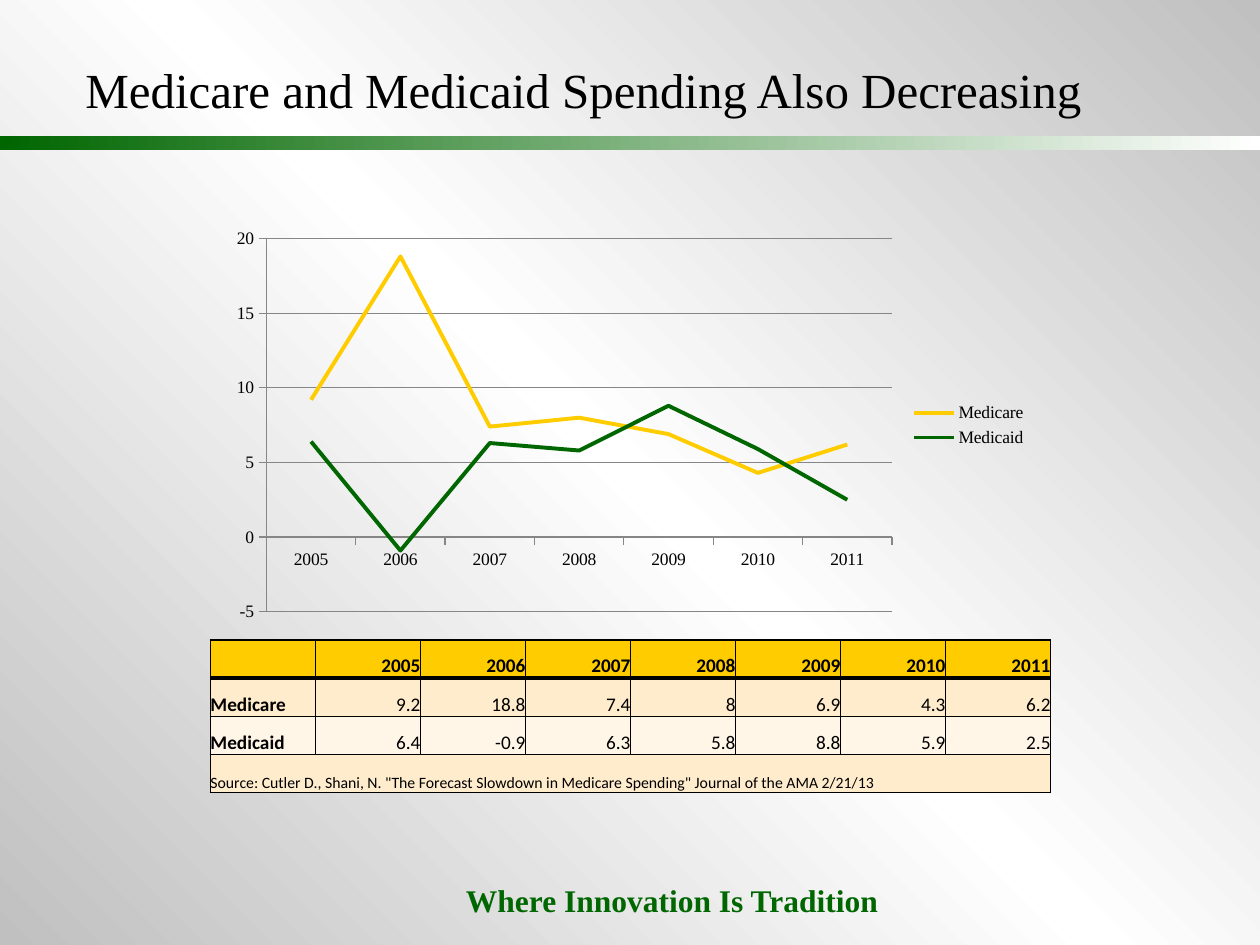
from copy import deepcopy

from lxml import etree
from pptx import Presentation
from pptx.chart.data import CategoryChartData
from pptx.dml.color import RGBColor
from pptx.enum.chart import XL_CHART_TYPE, XL_LEGEND_POSITION, XL_MARKER_STYLE, XL_TICK_MARK
from pptx.enum.shapes import MSO_SHAPE
from pptx.enum.text import MSO_ANCHOR, MSO_AUTO_SIZE, PP_ALIGN
from pptx.oxml.ns import qn
from pptx.util import Inches, Pt

LINE_CHART = XL_CHART_TYPE.LINE
LEGEND_RIGHT = XL_LEGEND_POSITION.RIGHT
NO_MARKER = XL_MARKER_STYLE.NONE
TICK_OUTSIDE = XL_TICK_MARK.OUTSIDE
RECTANGLE = MSO_SHAPE.RECTANGLE
BOTTOM = MSO_ANCHOR.BOTTOM
FIT_SHAPE = MSO_AUTO_SIZE.SHAPE_TO_FIT_TEXT
LEFT, RIGHT = PP_ALIGN.LEFT, PP_ALIGN.RIGHT

BLACK, GREEN, GOLD, GRAY, WHITE = "000000", "006600", "FFCC00", "868686", "FFFFFF"
SILVER, CREAM, PALE_CREAM = "C0C0C0", "FFECCC", "FFF6E7"

YEARS = ["2005", "2006", "2007", "2008", "2009", "2010", "2011"]
SPENDING = {
    "Medicare": [9.2, 18.8, 7.4, 8, 6.9, 4.3, 6.2],
    "Medicaid": [6.4, -0.9, 6.3, 5.8, 8.8, 5.9, 2.5],
}
SOURCE = ('Source: Cutler D., Shani, N. "The Forecast Slowdown in Medicare Spending" '
          "Journal of the AMA 2/21/13")


def color(value):
    return RGBColor.from_string(value)


class SlideBuilder:
    serif, sans = "Times New Roman", "Calibri"

    def __init__(self, slide):
        self.slide = slide

    def style(self, font, name, size, bold=False, fill=BLACK):
        font.name, font.size, font.bold = name, Pt(size), bold
        font.color.rgb = color(fill)

    def gradient(self, owner, element, colors, angle):
        """Spread the colours evenly along the gradient."""
        owner.fill.gradient()
        owner.fill.gradient_angle = angle
        stop_list = next(element.iter(qn("a:gsLst")))
        while len(stop_list) < len(colors):
            stop_list.append(deepcopy(stop_list[0]))
        for index, (stop, value) in enumerate(zip(owner.fill.gradient_stops, colors)):
            stop.position = index / (len(colors) - 1)
            stop.color.rgb = color(value)

    def background(self, colors, angle):
        self.gradient(self.slide.background, self.slide.element, colors, angle)

    def band(self, left, top, width, height, colors):
        shape = self.slide.shapes.add_shape(
            RECTANGLE, Inches(left), Inches(top), Inches(width), Inches(height))
        shape.shadow.inherit = False
        shape.line.fill.background()
        self.gradient(shape, shape.element, colors, 0)

    def text(self, left, top, width, height, words, size, bold=False, fill=BLACK):
        shape = self.slide.shapes.add_textbox(
            Inches(left), Inches(top), Inches(width), Inches(height))
        frame = shape.text_frame
        frame.word_wrap = False
        frame.auto_size = FIT_SHAPE
        frame.text = words
        self.style(frame.paragraphs[0].font, self.serif, size, bold, fill)

    def line_chart(self, left, top, width, height, categories, series, colors):
        data = CategoryChartData()
        data.categories = categories
        for name, values in series.items():
            data.add_series(name, values)
        chart = self.slide.shapes.add_chart(
            LINE_CHART, Inches(left), Inches(top), Inches(width), Inches(height), data).chart
        self.style(chart.font, self.serif, 10)
        chart.has_title = False
        chart.has_legend = True
        chart.legend.position = LEGEND_RIGHT
        chart.legend.include_in_layout = False
        value_axis = chart.value_axis
        value_axis.minimum_scale, value_axis.maximum_scale = -5, 20
        value_axis.major_unit = 5
        value_axis.has_major_gridlines = True
        for axis in (chart.category_axis, value_axis):
            axis.major_tick_mark = TICK_OUTSIDE
        for part in (chart.category_axis, value_axis, value_axis.major_gridlines):
            part.format.line.color.rgb = color(GRAY)
            part.format.line.width = Pt(0.75)
        for plotted, value in zip(chart.plots[0].series, colors):
            plotted.smooth = False
            plotted.marker.style = NO_MARKER
            plotted.format.line.color.rgb = color(value)
            plotted.format.line.width = Pt(2.25)

    def borders(self, cell, top, bottom):
        properties = cell._tc.get_or_add_tcPr()
        widths = {"lnL": 1, "lnR": 1, "lnT": top, "lnB": bottom}
        for index, (side, width) in enumerate(widths.items()):
            line = etree.Element(qn(f"a:{side}"), w=str(Pt(width)))
            fill = etree.SubElement(line, qn("a:solidFill"))
            etree.SubElement(fill, qn("a:srgbClr"), val=BLACK)
            properties.insert(index, line)

    def cell(self, cell, words, fill, size, bold, align):
        cell.fill.solid()
        cell.fill.fore_color.rgb = color(fill)
        cell.margin_left = cell.margin_right = cell.margin_top = cell.margin_bottom = 0
        cell.vertical_anchor = BOTTOM
        cell.text = words
        paragraph = cell.text_frame.paragraphs[0]
        paragraph.alignment = align
        self.style(paragraph.font, self.sans, size, bold)

    def table(self, left, top, width, height, rows, fills):
        """The first row is the header; the last is a note across all columns."""
        columns, last = len(rows[0]), len(rows) - 1
        table = self.slide.shapes.add_table(
            len(rows), columns, Inches(left), Inches(top), Inches(width), Inches(height)).table
        for row, (values, fill) in enumerate(zip(rows, fills)):
            for column in range(columns):
                words = values[column] if column < len(values) else ""
                cell = table.cell(row, column)
                self.cell(cell, words, fill,
                          size=9 if row == last else 11,
                          bold=row == 0 or (column == 0 and row < last),
                          align=RIGHT if column else LEFT)
                self.borders(cell, top=3 if row == 1 else 1, bottom=3 if row == 0 else 1)
        table.cell(last, 0).merge(table.cell(last, columns - 1))


def main():
    presentation = Presentation()
    presentation.slide_width, presentation.slide_height = Inches(10), Inches(7.5)
    builder = SlideBuilder(presentation.slides.add_slide(presentation.slide_layouts[6]))

    # Background, rule and motto
    builder.background([SILVER, WHITE, SILVER], 45)
    builder.band(0, 1.08, 10, 0.11, [GREEN, WHITE])
    builder.text(3.6, 6.94, 3.5, 0.4, "Where Innovation Is Tradition", 18, True, GREEN)

    # Spending chart
    builder.line_chart(1.75, 1.75, 6.5, 3.25, YEARS, SPENDING, [GOLD, GREEN])

    # Title
    builder.text(0.58, 0.42, 8.18, 0.57, "Medicare and Medicaid Spending Also Decreasing", 28)

    # Spending table
    rows = [["", *YEARS]]
    rows += [[name, *(f"{value:g}" for value in values)] for name, values in SPENDING.items()]
    rows.append([SOURCE])
    builder.table(1.67, 5.08, 6.67, 1.21, rows, [GOLD, CREAM, PALE_CREAM, CREAM])

    presentation.save("out.pptx")


if __name__ == "__main__":
    main()
